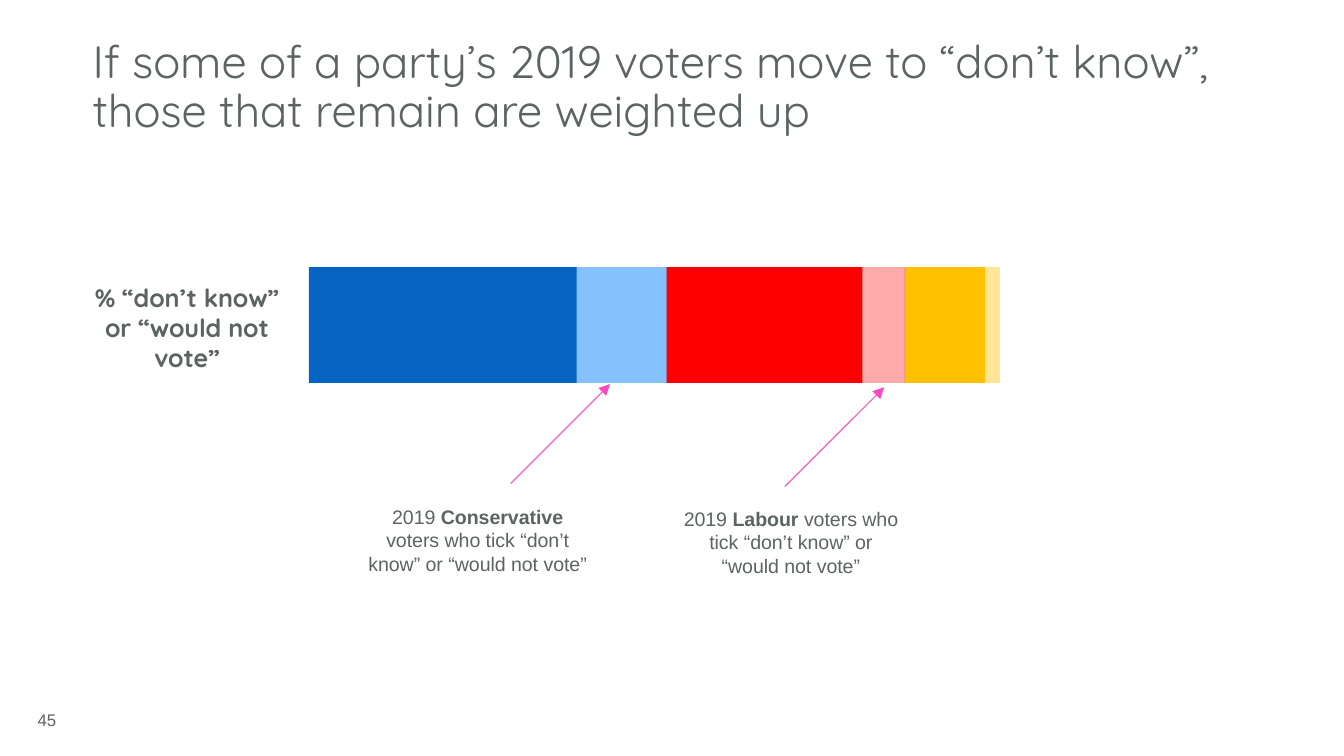
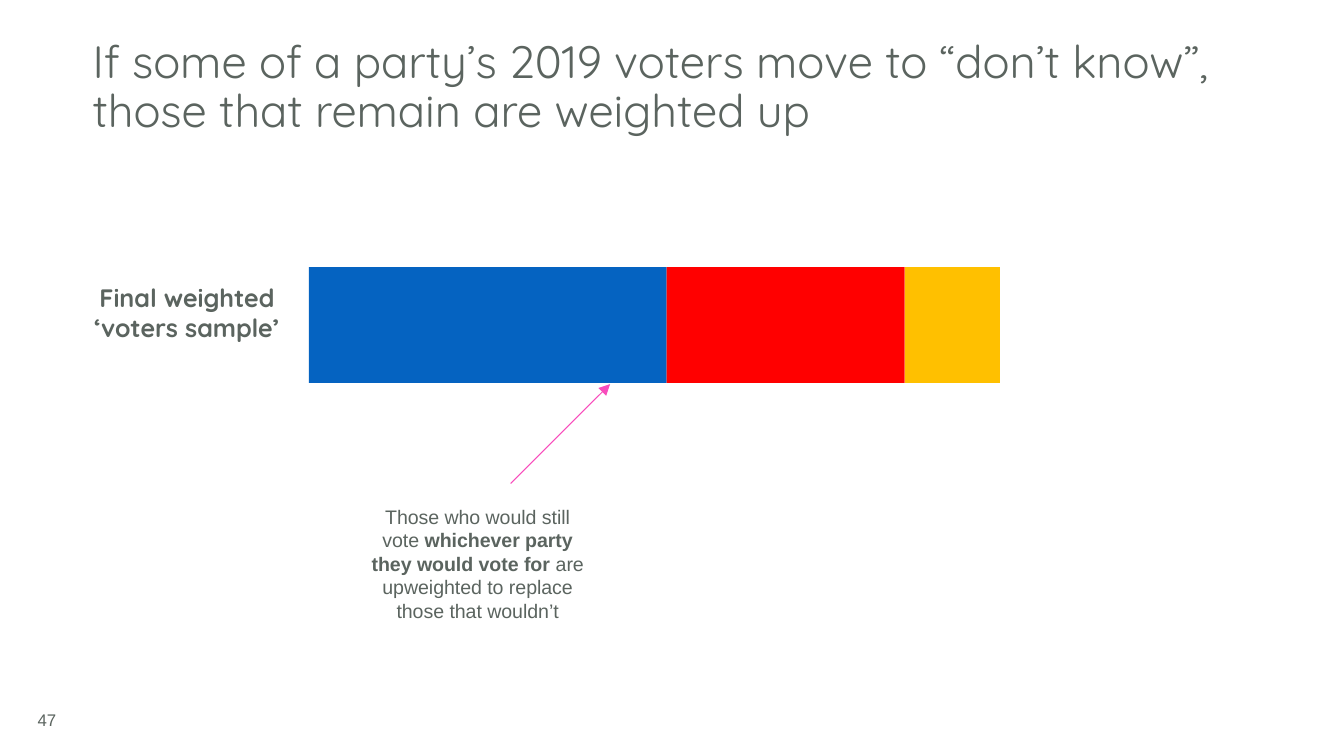
from dataclasses import dataclass

from lxml import etree
from pptx import Presentation
from pptx.dml.color import RGBColor
from pptx.enum.shapes import MSO_CONNECTOR, MSO_SHAPE
from pptx.enum.text import MSO_ANCHOR, MSO_AUTO_SIZE, PP_ALIGN
from pptx.oxml.ns import qn
from pptx.slide import Slide
from pptx.text.text import TextFrame
from pptx.util import Cm, Pt

RECTANGLE = MSO_SHAPE.RECTANGLE
STRAIGHT = MSO_CONNECTOR.STRAIGHT
TOP, MIDDLE, BOTTOM = MSO_ANCHOR.TOP, MSO_ANCHOR.MIDDLE, MSO_ANCHOR.BOTTOM
LEFT, CENTER = PP_ALIGN.LEFT, PP_ALIGN.CENTER
GROW = MSO_AUTO_SIZE.SHAPE_TO_FIT_TEXT


@dataclass(frozen=True)
class Theme:
    text: str = "5B645F"
    arrow: str = "F84CBC"
    heading_font: str = "Quicksand"
    body_font: str = "Arial"
    title_size: float = 24.3
    label_size: float = 13.5
    note_size: float = 10.5
    number_size: float = 9
    arrow_width: float = 0.5


THEME = Theme()


# Lengths in the records below are centimetres
@dataclass(frozen=True)
class Box:
    left: float
    top: float
    width: float
    height: float


@dataclass(frozen=True)
class TextStyle:
    font: str
    size: float
    bold: bool = False
    align: PP_ALIGN = LEFT
    anchor: MSO_ANCHOR = TOP


@dataclass(frozen=True)
class Party:
    color: str
    undecided_color: str
    width: float
    undecided_width: float


@dataclass(frozen=True)
class Note:
    """A callout whose arrow rises at 45 degrees from its start."""
    box: Box
    phrases: tuple[str, ...]  # every second phrase is bold
    arrow_left: float
    arrow_bottom: float


@dataclass(frozen=True)
class BarSlide:
    number: int
    label: str
    label_height: float
    show_undecided: bool
    notes: tuple[Note, ...]


TITLE = ("If some of a party’s 2019 voters move to “don’t know”, "
         "those that remain are weighted up")
TITLE_STYLE = TextStyle(THEME.heading_font, THEME.title_size, anchor=BOTTOM)
NUMBER_STYLE = TextStyle(THEME.body_font, THEME.number_size, anchor=MIDDLE)
LABEL_STYLE = TextStyle(THEME.heading_font, THEME.label_size, True, CENTER)
NOTE_STYLE = TextStyle(THEME.body_font, THEME.note_size, align=CENTER)

TITLE_BOX = Box(1.75, 0.76, 21.9, 1.96)
NUMBER_BOX = Box(0.46, 13.23, 8.59, 0.76)
BAR_LEFT, BAR_TOP, BAR_HEIGHT = 5.84, 5.05, 2.19
ARROW_RISE = 1.88

PARTIES = (
    Party("0563C1", "85C1FC", 6.76, 1.7),
    Party("FF0000", "FFABAB", 4.5, 0.8),
    Party("FFC000", "FFE697", 1.8, 0.28),
)

UNDECIDED = " voters who tick “don’t know” or “would not vote”"
SLIDES = (
    BarSlide(45, "% “don’t know” or “would not vote”", 1.98, True, (
        Note(Box(6.68, 9.42, 4.7, 1.6), ("2019 ", "Conservative", UNDECIDED),
             9.65, 9.14),
        Note(Box(12.6, 9.45, 4.7, 1.6), ("2019 ", "Labour", UNDECIDED),
             14.83, 9.2),
    )),
    BarSlide(47, "Final weighted ‘voters sample’", 1.42, False, (
        Note(Box(6.68, 9.42, 4.7, 2.49),
             ("Those who would still vote ", "whichever party they would vote for",
              " are upweighted to replace those that wouldn’t"),
             9.65, 9.14),
    )),
)


def add_text(slide: Slide, box: Box, phrases: tuple[str, ...],
             style: TextStyle) -> TextFrame:
    """Add a text box; every second phrase is bold."""
    shape = slide.shapes.add_textbox(
        Cm(box.left), Cm(box.top), Cm(box.width), Cm(box.height))
    text_frame = shape.text_frame
    text_frame.word_wrap = True
    text_frame.vertical_anchor = style.anchor
    paragraph = text_frame.paragraphs[0]
    paragraph.alignment = style.align
    for index, phrase in enumerate(phrases):
        run = paragraph.add_run()
        run.text = phrase
        run.font.name = style.font
        run.font.size = Pt(style.size)
        run.font.bold = style.bold or index % 2 == 1
        run.font.color.rgb = RGBColor.from_string(THEME.text)
    return text_frame


def add_segment(slide: Slide, left: float, width: float, color: str) -> None:
    shape = slide.shapes.add_shape(
        RECTANGLE, Cm(left), Cm(BAR_TOP), Cm(width), Cm(BAR_HEIGHT))
    shape.shadow.inherit = False
    shape.fill.solid()
    shape.fill.fore_color.rgb = RGBColor.from_string(color)
    shape.line.fill.background()


def add_bar(slide: Slide, show_undecided: bool) -> None:
    """Stack the parties; undecided voters take the right end of each."""
    left = BAR_LEFT
    for party in PARTIES:
        add_segment(slide, left, party.width, party.color)
        left += party.width
        if show_undecided:
            add_segment(slide, left - party.undecided_width,
                        party.undecided_width, party.undecided_color)


def add_note(slide: Slide, note: Note) -> None:
    text_frame = add_text(slide, note.box, note.phrases, NOTE_STYLE)
    text_frame.auto_size = GROW
    arrow = slide.shapes.add_connector(
        STRAIGHT, Cm(note.arrow_left), Cm(note.arrow_bottom),
        Cm(note.arrow_left + ARROW_RISE), Cm(note.arrow_bottom - ARROW_RISE))
    arrow.line.color.rgb = RGBColor.from_string(THEME.arrow)
    arrow.line.width = Pt(THEME.arrow_width)
    properties = arrow.element.spPr
    etree.SubElement(properties.find(qn("a:ln")), qn("a:tailEnd"), type="triangle")
    etree.SubElement(properties, qn("a:effectLst"))


def add_frame(slide: Slide, number: int) -> None:
    """Title and slide number shared by the slides."""
    title = add_text(slide, TITLE_BOX, (TITLE,), TITLE_STYLE)
    title.margin_left = title.margin_right = 0
    title.paragraphs[0].line_spacing = 0.9
    add_text(slide, NUMBER_BOX, (str(number),), NUMBER_STYLE)


def main() -> None:
    presentation = Presentation()
    presentation.slide_width = Cm(25.4)
    presentation.slide_height = Cm(14.29)
    blank = presentation.slide_layouts[6]
    for content in SLIDES:
        slide = presentation.slides.add_slide(blank)
        add_frame(slide, content.number)
        add_bar(slide, content.show_undecided)
        label = add_text(slide, Box(1.35, 5.21, 4.37, content.label_height),
                         (content.label,), LABEL_STYLE)
        label.auto_size = GROW
        for note in content.notes:
            add_note(slide, note)
    presentation.save("out.pptx")


if __name__ == "__main__":
    main()
